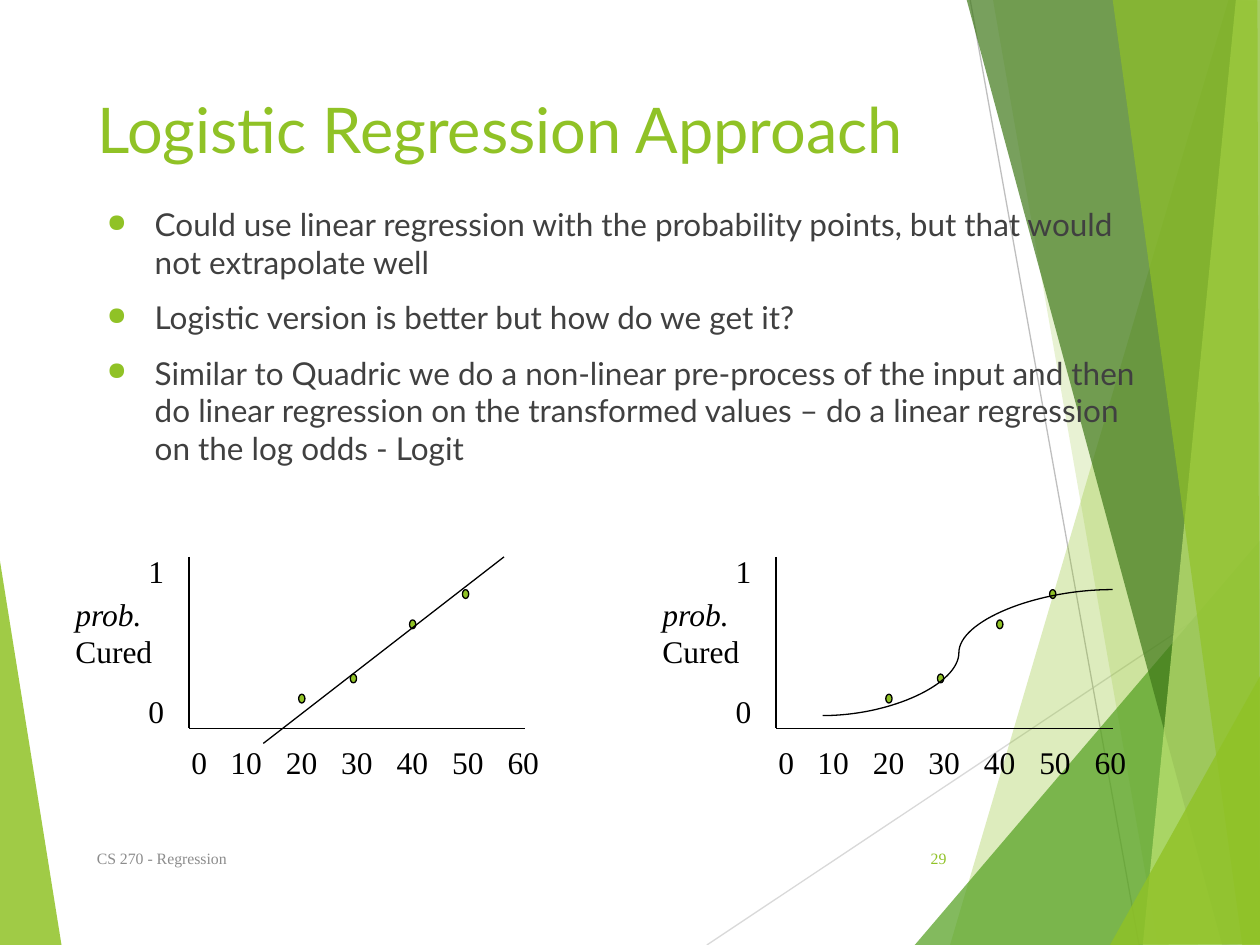
from lxml.etree import SubElement
from pptx import Presentation
from pptx.dml.color import RGBColor
from pptx.enum.shapes import MSO_CONNECTOR as Connector, MSO_SHAPE as Shape
from pptx.enum.text import MSO_ANCHOR as Anchor, MSO_AUTO_SIZE as AutoSize, PP_ALIGN as Align
from pptx.oxml.ns import qn
from pptx.util import Inches, Pt

COLORS = {
    "lime": "90C226", "pale": "C0E474", "green": "54A021", "forest": "3F7819",
    "body": "404040", "footer": "8C8C8C", "ink": "000000",
    "light_line": "D9D9D9", "mid_line": "BFBFBF",
}
SANS, SERIF = "Lato", "Times New Roman"

LEFT_FACET = ("lime", 85, [(-0.01, 4.39), (0.49, 7.51), (-0.01, 7.5)])
RIGHT_FACETS = [
    ("lime", 30, [(9.75, 0), (7.54, 7.5), (10.02, 7.51), (10.01, 0.01)]),
    ("lime", 20, [(7.88, -0.01), (9.19, 7.5), (10.01, 7.5), (10.01, -0.01)]),
    ("green", 72, [(7.26, 7.5), (10, 4.29), (10.01, 7.5)]),
    ("forest", 70, [(7.67, -0.01), (9.7, 7.5), (10.01, 7.49), (10.01, -0.01)]),
    ("pale", 70, [(9.81, -0.01), (9.07, 7.5), (10.01, 7.5), (10, -0.01)]),
    ("lime", 65, [(8.83, -0.01), (9.86, 7.5), (10, 7.5), (9.98, -0.01)]),
    ("lime", 80, [(8.81, 7.5), (10.01, 5.35), (10.01, 7.49)]),
]
BULLETS = [
    "Could use linear regression with the probability points, but that would not extrapolate well",
    "Logistic version is better but how do we get it?",
    "Similar to Quadric we do a non-linear pre-process of the input and then do linear regression "
    "on the transformed values – do a linear regression on the log odds - Logit",
]
DOSES = range(0, 70, 10)
POINTS = [(3.25, 4.92), (2.37, 5.51), (3.67, 4.68), (2.78, 5.35)]


class SlideBuilder:
    def __init__(self, page):
        self.page = page
        self.shapes = page.shapes

    def color(self, name):
        return RGBColor.from_string(COLORS[name])

    def style(self, para, size, font, color):
        for span in para.runs:
            span.font.size = Pt(size)
            span.font.name = font
            span.font.color.rgb = self.color(color)

    def title(self, text, left, top, width, height):
        box = self.shapes.title
        self.shapes._spTree.append(box._element)
        box.left, box.top, box.width, box.height = map(Inches, (left, top, width, height))
        frame = box.text_frame
        frame.text = text
        frame.auto_size = AutoSize.NONE
        frame.vertical_anchor = Anchor.TOP
        frame.paragraphs[0].alignment = Align.LEFT
        self.style(frame.paragraphs[0], 36, SANS, "lime")

    def text(self, text, left, top, width, height, size=18, font=SERIF,
             color="ink", align=Align.LEFT, anchor=Anchor.TOP):
        box = self.shapes.add_textbox(*map(Inches, (left, top, width, height)))
        frame = box.text_frame
        frame.word_wrap = True
        frame.vertical_anchor = anchor
        frame.text = text
        for para in frame.paragraphs:
            para.alignment = align
            self.style(para, size, font, color)
        return frame

    def bullets(self, items, left, top, width, height):
        frame = self.text("\n".join(items), left, top, width, height, font=SANS, color="body")
        for index, para in enumerate(frame.paragraphs):
            props = para._p.get_or_add_pPr()
            props.set("marL", str(Inches(0.38)))
            props.set("indent", str(-Inches(0.38)))
            tint = SubElement(props, qn("a:buClr"))
            SubElement(tint, qn("a:srgbClr"), val=COLORS["lime"])
            SubElement(props, qn("a:buSzPct"), val="80000")
            SubElement(props, qn("a:buChar"), char="●")
            if index:
                para.space_before = Pt(10)

    def tabbed(self, labels, first_stop, step, left, top, width, height):
        frame = self.text("\t".join(labels), left, top, width, height)
        stops = SubElement(frame.paragraphs[0]._p.get_or_add_pPr(), qn("a:tabLst"))
        for index in range(len(labels) - 1):
            position = Inches(first_stop + index * step)
            SubElement(stops, qn("a:tab"), pos=str(position), algn="l")

    def line(self, start, end, color="ink", kind=Connector.STRAIGHT):
        line = self.shapes.add_connector(kind, *map(Inches, (*start, *end)))
        line.line.color.rgb = self.color(color)
        line.line.width = Pt(0.75)
        SubElement(line._element.spPr, qn("a:effectLst"))
        return line

    def curve(self, start, end, bend):
        line = self.line(start, end, kind=Connector.CURVE)
        guides = line._element.spPr.find(qn("a:prstGeom")).find(qn("a:avLst"))
        SubElement(guides, qn("a:gd"), name="adj1", fmla=f"val {round(bend * 100000)}")

    def facet(self, color, opacity, points):
        corners = [(Inches(x), Inches(y)) for x, y in points]
        builder = self.shapes.build_freeform(*corners[0])
        builder.add_line_segments(corners[1:], close=True)
        shape = builder.convert_to_shape()
        shape.shadow.inherit = False
        shape.fill.solid()
        shape.fill.fore_color.rgb = self.color(color)
        shape.line.fill.background()
        tint = shape._element.spPr.find(qn("a:solidFill"))[0]
        SubElement(tint, qn("a:alpha"), val=str(opacity * 1000))

    def dot(self, left, top):
        dot = self.shapes.add_shape(Shape.OVAL, *map(Inches, (left, top, 0.05, 0.07)))
        dot.shadow.inherit = False
        dot.fill.solid()
        dot.fill.fore_color.rgb = self.color("lime")
        dot.line.color.rgb = self.color("ink")
        dot.line.width = Pt(0.75)

    def plot(self, shift):
        origin = (1.5 + shift, 5.78)
        self.line((origin[0], 4.42), origin)
        self.line(origin, (4.17 + shift, 5.78))
        self.tabbed([str(dose) for dose in DOSES], 0.31, 0.44, 1.42 + shift, 5.85, 3.26, 0.4)
        name = self.text("prob.\nCured", 0.5 + shift, 4.67, 0.83, 0.71)
        name.paragraphs[0].runs[0].font.italic = True
        for left, top in POINTS:
            self.dot(left + shift, top)
        for label, top in (("0", 5.44), ("1", 4.33)):
            self.text(label, 1.08 + shift, top, 0.33, 0.4)


def main():
    deck = Presentation()
    deck.slide_width, deck.slide_height = Inches(10), Inches(7.5)
    slide = SlideBuilder(deck.slides.add_slide(deck.slide_layouts[5]))

    slide.facet(*LEFT_FACET)
    slide.line((5.61, 7.5), (10.01, 4.57), "light_line")
    slide.line((7.7, 0), (9.04, 7.5), "mid_line")
    for facet in RIGHT_FACETS:
        slide.facet(*facet)

    slide.title("Logistic Regression Approach", 0.67, 0.67, 6.94, 1.44)
    slide.bullets(BULLETS, 0.75, 1.58, 8.5, 2.58)
    slide.text("CS 270 - Regression", 0.67, 6.61, 5.06, 0.4, 9,
               color="footer", anchor=Anchor.MIDDLE)
    slide.text("29", 7.05, 6.61, 0.56, 0.4, 9,
               color="lime", align=Align.RIGHT, anchor=Anchor.MIDDLE)

    for shift in (0, 4.66):
        slide.plot(shift)
    slide.line((4, 4.42), (2.09, 5.9))
    slide.curve((6.53, 5.68), (8.83, 4.68), 0.47)

    deck.save("out.pptx")


if __name__ == "__main__":
    main()
